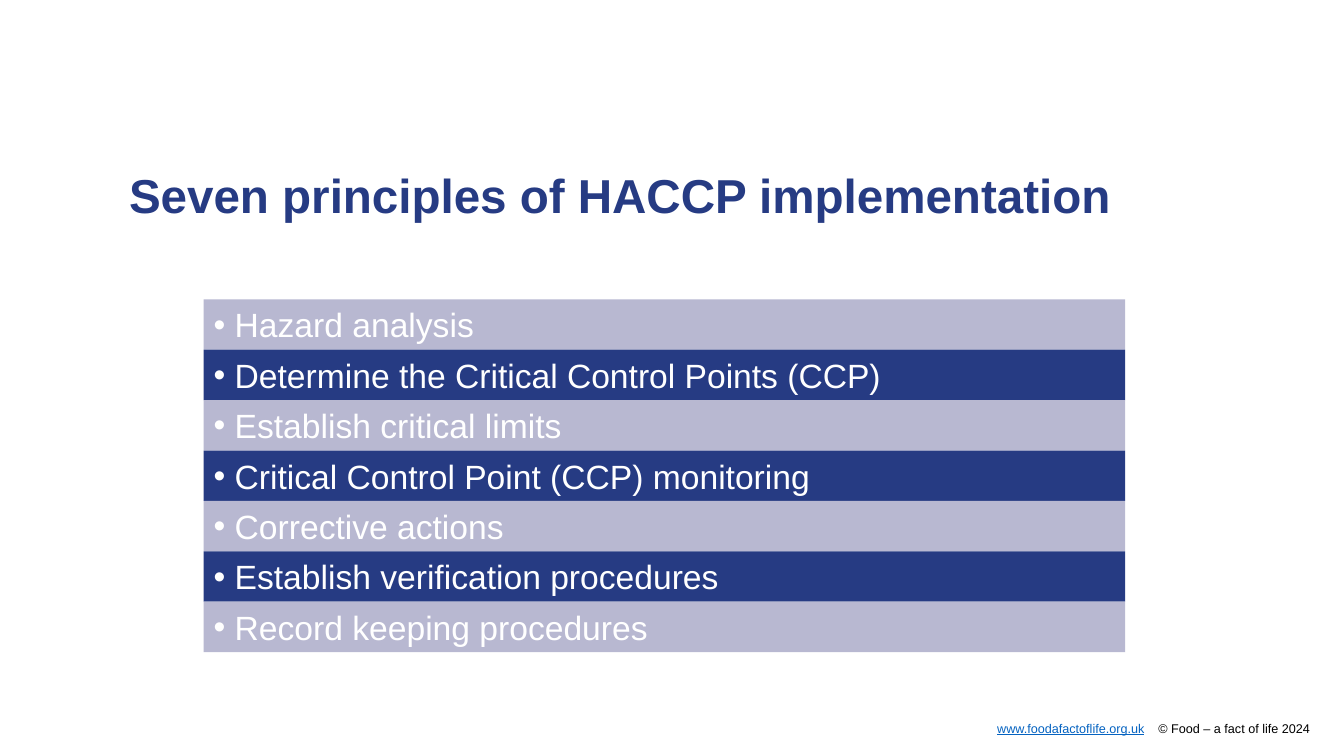
from lxml import etree
from pptx import Presentation
from pptx.dml.color import RGBColor
from pptx.enum import shapes, text
from pptx.oxml import ns
from pptx.util import Emu, Pt

NAVY = RGBColor(0x26, 0x3B, 0x83)
LAVENDER = RGBColor(0xB8, 0xB8, 0xD1)
LINK_BLUE = RGBColor(0x05, 0x63, 0xC1)
WHITE = RGBColor(0xFF, 0xFF, 0xFF)
BLACK = RGBColor(0, 0, 0)

PRINCIPLES = [
    "Hazard analysis",
    "Determine the Critical Control Points (CCP)",
    "Establish critical limits",
    "Critical Control Point (CCP) monitoring",
    "Corrective actions",
    "Establish verification procedures",
    "Record keeping procedures",
]


def px(length):
    """Turn px, 100 to the inch, into EMU."""
    return Emu(length * 9144)


class Deck:
    font_name = "Arial"

    def __init__(self, width, height):
        self.prs = Presentation()
        self.prs.slide_width, self.prs.slide_height = px(width), px(height)
        self.slide = self.prs.slides.add_slide(self.prs.slide_layouts[5])

    def style(self, item, size, color, bold=False, underline=False):
        """Format the font of a run or paragraph."""
        font = item.font
        font.name, font.size = self.font_name, Pt(size)
        font.bold, font.underline = bold, underline
        font.color.rgb = color

    def frame(self, shape, side=0, top=0):
        """Prepare a top-anchored, wrapping text frame with the given insets."""
        frame = shape.text_frame
        frame.word_wrap = True
        frame.auto_size = text.MSO_AUTO_SIZE.NONE
        frame.vertical_anchor = text.MSO_ANCHOR.TOP
        frame.margin_left = frame.margin_right = px(side)
        frame.margin_top = frame.margin_bottom = px(top)
        return frame

    def title(self, wording, left, top, width, height):
        title = self.slide.shapes.title
        title.left, title.top = px(left), px(top)
        title.width, title.height = px(width), px(height)
        frame = self.frame(title)
        frame.text = wording
        heading = frame.paragraphs[0]
        heading.alignment = text.PP_ALIGN.LEFT
        heading.line_spacing = 0.9
        self.style(heading.runs[0], 34, NAVY, bold=True)

    def bar(self, wording, fill, left, top, width, height):
        """Add a filled bar with one bulleted line."""
        bar = self.slide.shapes.add_shape(
            shapes.MSO_SHAPE.RECTANGLE, px(left), px(top), px(width), px(height))
        bar.shadow.inherit = False
        bar.fill.solid()
        bar.fill.fore_color.rgb = fill
        bar.line.fill.background()
        frame = self.frame(bar, side=10, top=5)
        frame.text = wording
        principle = frame.paragraphs[0]
        principle.alignment = text.PP_ALIGN.LEFT
        props = principle._p.get_or_add_pPr()
        props.set("marL", str(px(21)))
        props.set("indent", str(px(-21)))
        etree.SubElement(props, ns.qn("a:buFont"), typeface=self.font_name)
        etree.SubElement(props, ns.qn("a:buChar"), char="•")
        self.style(principle.runs[0], 24, WHITE)

    def footer(self, address, credit, left, top, width, height, tabs):
        """Add the address and the credit, each at its own tab stop."""
        box = self.slide.shapes.add_textbox(px(left), px(top), px(width), px(height))
        line = self.frame(box).paragraphs[0]
        stops = etree.SubElement(line._p.get_or_add_pPr(), ns.qn("a:tabLst"))
        for position, side in tabs:
            etree.SubElement(stops, ns.qn("a:tab"), pos=str(px(position)), algn=side)
        for wording, color, underline in (
                ("\t", BLACK, False), (address, LINK_BLUE, True),
                ("\t" + credit, BLACK, False)):
            run = line.add_run()
            run.text = wording
            self.style(run, 9, color, underline=underline)


def main():
    deck = Deck(1333, 750)
    deck.title("Seven principles of HACCP implementation", 128, 171, 1063, 79)
    bar_height = 50
    for row, principle in enumerate(PRINCIPLES):
        fill = NAVY if row % 2 else LAVENDER
        deck.bar(principle, fill, 202, 297 + row * bar_height, 914, bar_height)
    deck.footer("www.foodafactoflife.org.uk", "© Food – a fact of life 2024",
                126, 715, 1190, 15, tabs=[(1009, "r"), (1023, "l")])
    deck.prs.save("out.pptx")


if __name__ == "__main__":
    main()
